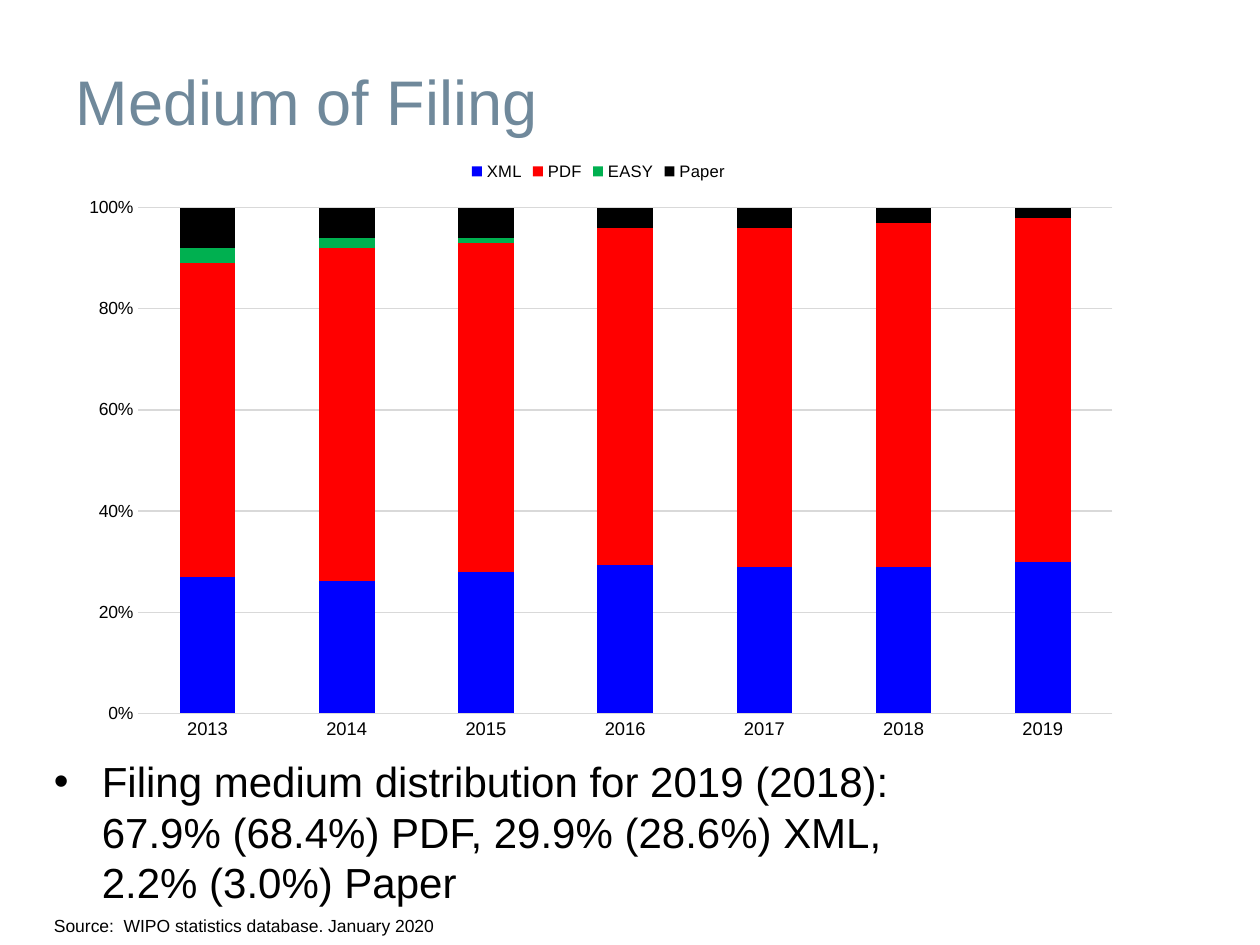
from lxml import etree
from pptx import Presentation
from pptx.chart.data import CategoryChartData
from pptx.dml.color import RGBColor
from pptx.enum.chart import XL_CHART_TYPE, XL_LEGEND_POSITION, XL_TICK_MARK
from pptx.enum.text import MSO_ANCHOR, PP_ALIGN
from pptx.oxml import parse_xml
from pptx.oxml.ns import nsdecls, qn
from pptx.util import Inches, Pt

STACKED = XL_CHART_TYPE.COLUMN_STACKED_100
LEGEND_TOP = XL_LEGEND_POSITION.TOP
NO_TICK = XL_TICK_MARK.NONE
MIDDLE = MSO_ANCHOR.MIDDLE
LEFT = PP_ALIGN.LEFT

FONT = "Arial"
COLORS = {
    "title": "70899B",
    "text": "000000",
    "grid": "D9D9D9",
    "XML": "0000FF",
    "PDF": "FF0000",
    "EASY": "00B050",
    "Paper": "000000",
}
YEARS = [str(year) for year in range(2013, 2020)]
FILINGS = {
    "XML": (27, 26, 28, 29, 29, 29, 30),
    "PDF": (62, 65, 65, 66, 67, 68, 68),
    "EASY": (3, 2, 1, None, None, None, None),
    "Paper": (8, 6, 6, 4, 4, 3, 2),
}
PLOT_LAYOUT = {"x": 0.07, "y": 0.1, "w": 0.91, "h": 0.84}


def color(name):
    return RGBColor.from_string(COLORS[name])


def style_font(font, size, color_name="text"):
    font.name = FONT
    font.size = Pt(size)
    font.bold = False
    font.color.rgb = color(color_name)


def style_line(line):
    line.color.rgb = color("grid")
    line.width = Pt(0.75)


def add_run(paragraph, text, size, color_name="text"):
    run = paragraph.add_run()
    run.text = text
    style_font(run.font, size, color_name)


def set_title(slide, text):
    title = slide.shapes.title
    title.left, title.top = Inches(0.5), Inches(0.17)
    title.width, title.height = Inches(9), Inches(1.25)
    title.text_frame.vertical_anchor = MIDDLE
    paragraph = title.text_frame.paragraphs[0]
    paragraph.alignment = LEFT
    add_run(paragraph, text, 36, "title")


def add_text(slide, left, top, width, height, lines, size, bullet_indent=None):
    box = slide.shapes.add_textbox(
        Inches(left), Inches(top), Inches(width), Inches(height))
    box.text_frame.word_wrap = True
    paragraph = box.text_frame.paragraphs[0]
    if bullet_indent:
        properties = paragraph._p.get_or_add_pPr()
        properties.set("marL", str(Inches(bullet_indent)))
        properties.set("indent", str(-Inches(bullet_indent)))
        etree.SubElement(properties, qn("a:buFont")).set("typeface", FONT)
        etree.SubElement(properties, qn("a:buChar")).set("char", "•")
    for index, line in enumerate(lines):
        if index:
            paragraph.add_line_break()
        add_run(paragraph, line, size)


def set_plot_layout(chart):
    plot_area = chart._chartSpace.chart.plotArea
    for layout in plot_area.findall(qn("c:layout")):
        plot_area.remove(layout)
    parts = "".join(
        f'<c:{key} val="{value}"/>' for key, value in PLOT_LAYOUT.items())
    plot_area.insert(0, parse_xml(
        f'<c:layout {nsdecls("c")}><c:manualLayout>'
        '<c:layoutTarget val="inner"/><c:xMode val="edge"/>'
        f'<c:yMode val="edge"/>{parts}</c:manualLayout></c:layout>'))


def style_axes(chart):
    years, shares = chart.category_axis, chart.value_axis
    for axis, size in ((years, 10.5), (shares, 10)):
        axis.major_tick_mark = NO_TICK
        axis.minor_tick_mark = NO_TICK
        style_font(axis.tick_labels.font, size)
    style_line(years.format.line)
    shares.format.line.fill.background()
    shares.minimum_scale = 0
    shares.maximum_scale = 1
    shares.major_unit = 0.2
    shares.has_major_gridlines = True
    style_line(shares.major_gridlines.format.line)
    shares.tick_labels.number_format = "0%"
    shares.tick_labels.number_format_is_linked = False


def add_filing_chart(slide):
    data = CategoryChartData()
    data.categories = YEARS
    for medium, values in FILINGS.items():
        data.add_series(medium, values)
    chart = slide.shapes.add_chart(
        STACKED, Inches(0.5), Inches(1.17), Inches(8.5), Inches(4.78),
        data).chart
    style_font(chart.font, 10)
    chart.has_title = False
    chart.has_legend = True
    chart.legend.position = LEGEND_TOP
    chart.legend.include_in_layout = False
    style_font(chart.legend.font, 9.5)
    plot = chart.plots[0]
    plot.gap_width = 150
    plot.overlap = 100
    plot.vary_by_categories = False
    for series in plot.series:
        series.format.fill.solid()
        series.format.fill.fore_color.rgb = color(series.name)
    style_axes(chart)
    set_plot_layout(chart)


def main():
    presentation = Presentation()
    presentation.slide_width = Inches(10)
    presentation.slide_height = Inches(7.5)
    slide = presentation.slides.add_slide(presentation.slide_layouts[5])
    set_title(slide, "Medium of Filing")
    add_filing_chart(slide)
    add_text(slide, 0.33, 5.95, 7.08, 0.64, (
        "Filing medium distribution for 2019 (2018):",
        "67.9% (68.4%) PDF, 29.9% (28.6%) XML, 2.2% (3.0%) Paper",
    ), 24, bullet_indent=0.38)
    add_text(slide, 0.33, 7.21, 5, 0.27,
             ("Source:  WIPO statistics database. January 2020",), 10)
    presentation.save("out.pptx")


if __name__ == "__main__":
    main()
